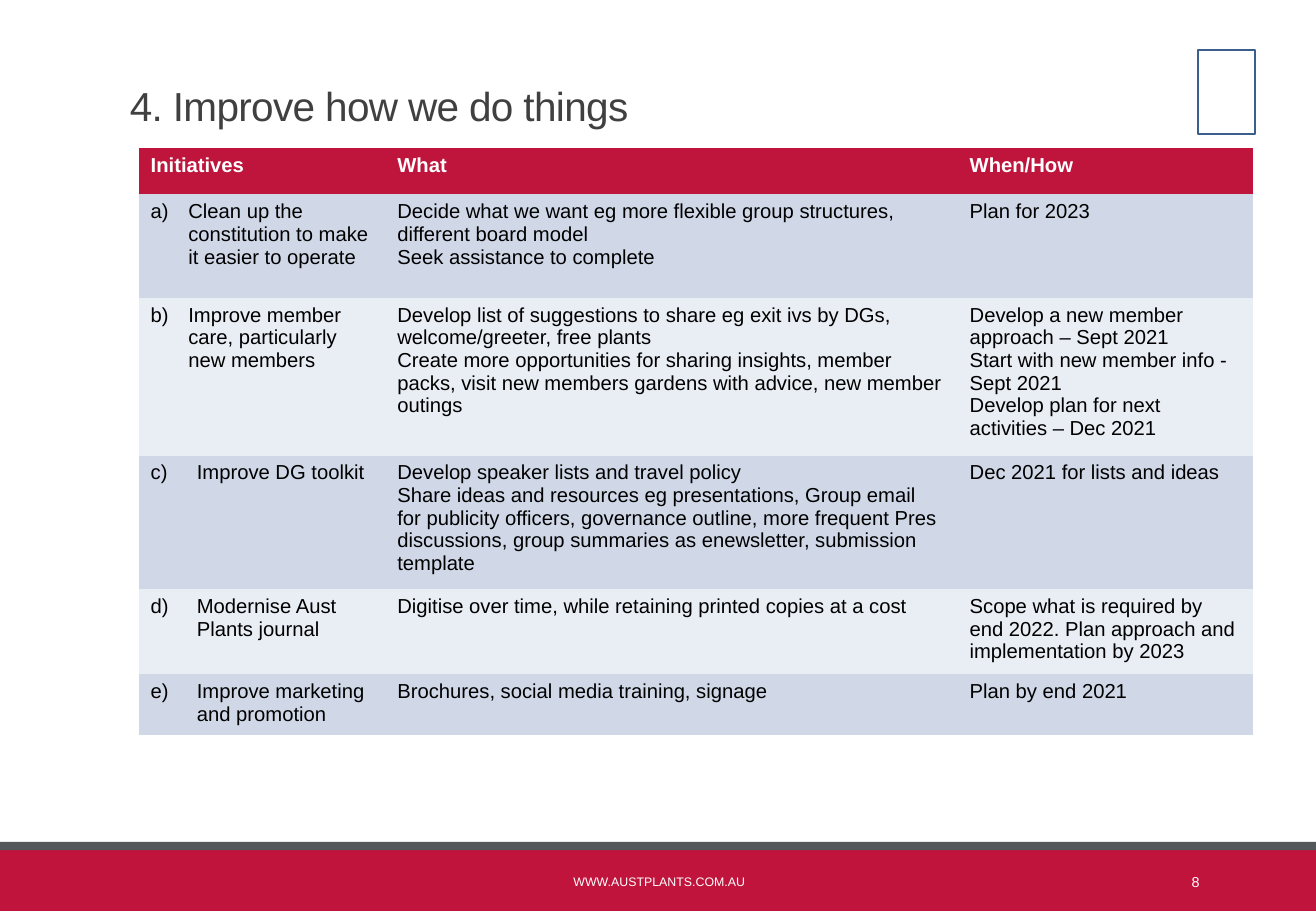
from dataclasses import dataclass

import pptx
import pptx.dml.color
import pptx.enum.shapes
import pptx.enum.text
import pptx.oxml.ns
import pptx.slide
import pptx.table
import pptx.text.text
import pptx.util
from lxml import etree

SLIDE_WIDTH = pptx.util.Inches(10.83)
SLIDE_HEIGHT = pptx.util.Inches(7.5)
FONT = "Arial"
COLORS = {
    "footer": "C0143C",
    "stripe": "54585B",
    "title": "404040",
    "header": "BF143B",
    "odd_row": "D0D8E8",
    "even_row": "E9EDF4",
    "emblem": "3A5F8C",
    "text": "000000",
    "white": "FFFFFF",
}
PLAIN_TABLE_STYLE = "{2D5ABB26-0587-4C30-8999-92F81FD0307C}"
ALIGN = pptx.enum.text.PP_ALIGN
ANCHOR = pptx.enum.text.MSO_ANCHOR


@dataclass(frozen=True)
class Area:
    """A rectangle in percent of the slide's width and height."""
    left: float
    top: float
    width: float
    height: float

    def box(self) -> tuple[int, int, int, int]:
        return (across(self.left), down(self.top),
                across(self.width), down(self.height))


@dataclass(frozen=True)
class Panel:
    area: Area
    fill: str | None = None
    line: str | None = None


@dataclass(frozen=True)
class Label:
    area: Area
    text: str
    size: float
    color: str
    align: ALIGN = ALIGN.LEFT
    anchor: ANCHOR = ANCHOR.MIDDLE
    line_spacing: float = 1.0
    tracking: int = 0


@dataclass(frozen=True)
class Initiative:
    name: str
    what: str
    when: str
    height: float
    indent: float


PANELS = [
    Panel(Area(0, 93.33, 100, 6.67), fill="footer"),
    Panel(Area(0, 92.4, 100, 0.93), fill="stripe"),
    Panel(Area(91.04, 5.47, 4.34, 9.2), line="emblem"),
]
LABELS = [
    Label(Area(8.96, 5.73, 43.21, 9.2), "4. Improve how we do things", 24, "title",
          anchor=ANCHOR.BOTTOM, line_spacing=0.85, tracking=-40),
    Label(Area(30.29, 94.13, 39.61, 5.33), "WWW.AUSTPLANTS.COM.AU", 7.3, "white",
          ALIGN.CENTER),
    Label(Area(81.26, 94.13, 10.8, 5.33), "8", 8.5, "white", ALIGN.RIGHT),
]
TABLE_AREA = Area(10.53, 16.27, 84.67, 45.06)
COLUMN_WIDTHS = [18.74, 43.49, 22.44]
HEADINGS = ["Initiatives", "What", "When/How"]
HEADER_HEIGHT = 5.07
INITIATIVES = [
    Initiative("Clean up the constitution to make it easier to operate",
               "Decide what we want eg more flexible group structures, different board model\n"
               "Seek assistance to complete",
               "Plan for 2023", 11.33, 0.31),
    Initiative("Improve member care, particularly new members",
               "Develop list of suggestions to share eg exit ivs by DGs, welcome/greeter, "
               "free plants\n"
               "Create more opportunities for sharing insights, member packs, visit new "
               "members gardens with advice, new member outings",
               "Develop a new member approach – Sept 2021\n"
               "Start with new member info - Sept 2021\n"
               "Develop plan for next activities – Dec 2021", 8, 0.31),
    Initiative("Improve DG toolkit",
               "Develop speaker lists and travel policy\n"
               "Share ideas and resources eg presentations, Group email for publicity "
               "officers, governance outline, more frequent Pres discussions, group "
               "summaries as enewsletter, submission template",
               "Dec 2021 for lists and ideas", 7.2, 0.38),
    Initiative("Modernise Aust Plants journal",
               "Digitise over time, while retaining printed copies at a cost",
               "Scope what is required by end 2022. Plan approach and implementation by 2023",
               7.2, 0.38),
    Initiative("Improve marketing and promotion",
               "Brochures, social media training, signage",
               "Plan by end 2021", 6.27, 0.38),
]


def across(percent: float) -> int:
    return round(SLIDE_WIDTH * percent / 100)


def down(percent: float) -> int:
    return round(SLIDE_HEIGHT * percent / 100)


def rgb(name: str) -> pptx.dml.color.RGBColor:
    return pptx.dml.color.RGBColor.from_string(COLORS[name])


def format_runs(frame: pptx.text.text.TextFrame, size: float, color: str,
                bold: bool = False) -> None:
    for paragraph in frame.paragraphs:
        for run in paragraph.runs:
            run.font.name = FONT
            run.font.size = pptx.util.Pt(size)
            run.font.bold = bold
            run.font.color.rgb = rgb(color)


def draw_panel(slide: pptx.slide.Slide, panel: Panel) -> None:
    shape = slide.shapes.add_shape(pptx.enum.shapes.MSO_SHAPE.RECTANGLE, *panel.area.box())
    shape.shadow.inherit = False
    if panel.fill:
        shape.fill.solid()
        shape.fill.fore_color.rgb = rgb(panel.fill)
    else:
        shape.fill.background()
    if panel.line:
        shape.line.color.rgb = rgb(panel.line)
        shape.line.width = pptx.util.Pt(1.25)
    else:
        shape.line.fill.background()


def draw_label(slide: pptx.slide.Slide, label: Label) -> None:
    frame = slide.shapes.add_textbox(*label.area.box()).text_frame
    frame.word_wrap = True
    frame.vertical_anchor = label.anchor
    frame.text = label.text
    paragraph = frame.paragraphs[0]
    paragraph.alignment = label.align
    paragraph.line_spacing = label.line_spacing
    format_runs(frame, label.size, label.color)
    if label.tracking:
        paragraph.runs[0].font._element.set("spc", str(label.tracking))


def add_letter(paragraph: pptx.text.text._Paragraph, position: int, indent: float) -> None:
    """Number the paragraph a), b), c) ... with a hanging indent in inches."""
    properties = paragraph._p.get_or_add_pPr()
    hanging = pptx.util.Inches(indent)
    properties.set("marL", str(hanging))
    properties.set("indent", str(-hanging))
    etree.SubElement(properties, pptx.oxml.ns.qn("a:buAutoNum"),
                     type="alphaLcParenR", startAt=str(position))


def fill_cell(cell: pptx.table._Cell, text: str, fill: str, color: str,
              bold: bool = False) -> None:
    cell.fill.solid()
    cell.fill.fore_color.rgb = rgb(fill)
    cell.text_frame.text = text
    format_runs(cell.text_frame, 12, color, bold)


def draw_initiatives(slide: pptx.slide.Slide) -> None:
    table = slide.shapes.add_table(len(INITIATIVES) + 1, len(HEADINGS),
                                   *TABLE_AREA.box()).table
    table.horz_banding = False
    table._tbl.tblPr.find(pptx.oxml.ns.qn("a:tableStyleId")).text = PLAIN_TABLE_STYLE
    for column, width in zip(table.columns, COLUMN_WIDTHS):
        column.width = across(width)
    table.rows[0].height = down(HEADER_HEIGHT)
    for column, heading in enumerate(HEADINGS):
        fill_cell(table.cell(0, column), heading, "header", "white", bold=True)
    for row, item in enumerate(INITIATIVES, start=1):
        table.rows[row].height = down(item.height)
        fill = "odd_row" if row % 2 else "even_row"
        for column, text in enumerate((item.name, item.what, item.when)):
            fill_cell(table.cell(row, column), text, fill, "text")
        add_letter(table.cell(row, 0).text_frame.paragraphs[0], row, item.indent)


def main() -> None:
    deck = pptx.Presentation()
    deck.slide_width = SLIDE_WIDTH
    deck.slide_height = SLIDE_HEIGHT
    slide = deck.slides.add_slide(deck.slide_layouts[6])
    for panel in PANELS:
        draw_panel(slide, panel)
    for label in LABELS:
        draw_label(slide, label)
    draw_initiatives(slide)
    deck.save("out.pptx")


if __name__ == "__main__":
    main()
